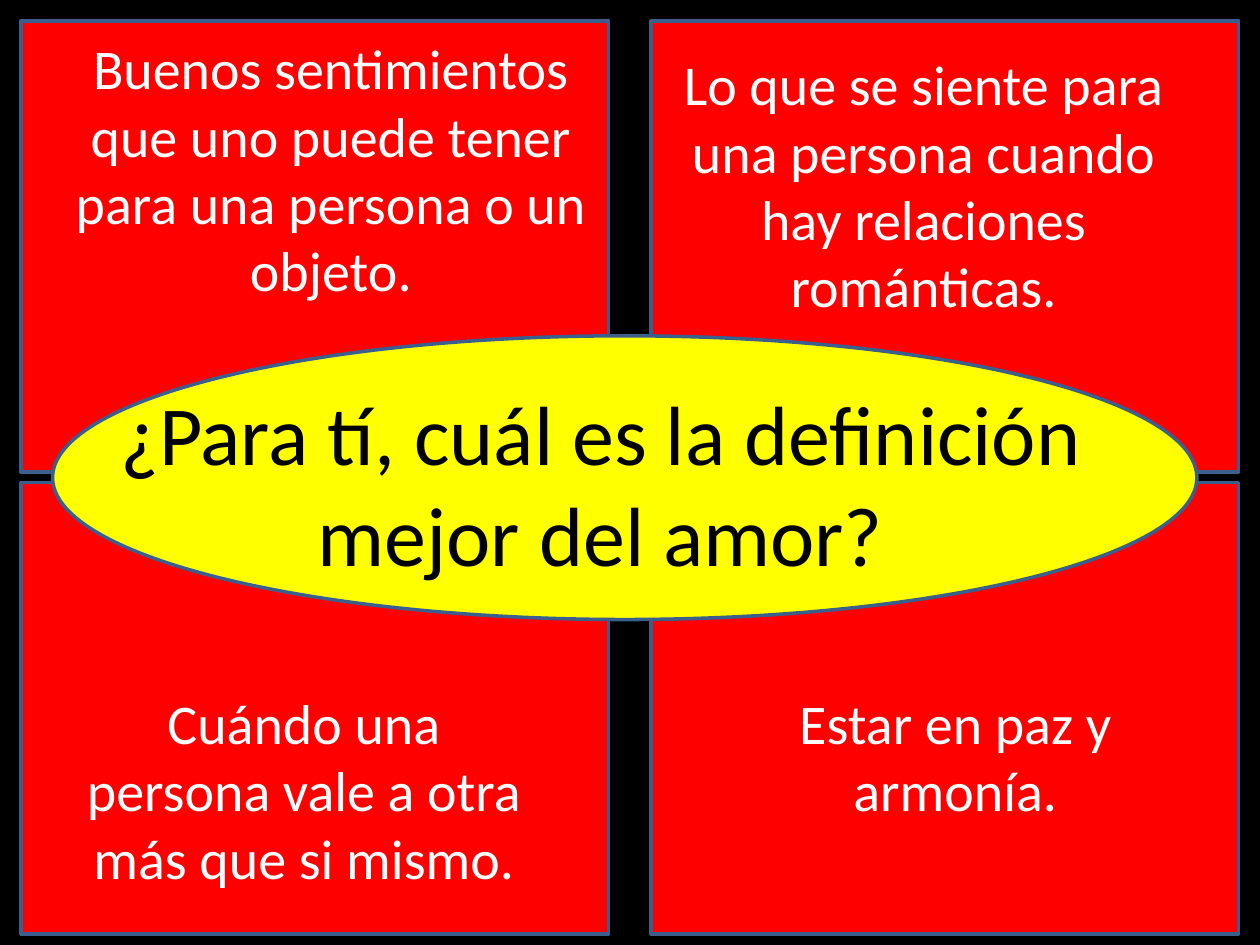
from pptx import Presentation
from pptx.dml.color import RGBColor
from pptx.enum.shapes import MSO_SHAPE as SHAPE
from pptx.enum.text import MSO_AUTO_SIZE as AUTO, PP_ALIGN as ALIGN
from pptx.util import Cm, Pt

COLORS = {
    "background": "000000",
    "panel": "FF0000",
    "oval": "FFFF00",
    "outline": "3A5F8C",
    "answer": "FFFFFF",
    "question": "000000",
}
FONT = "Calibri"

MARGIN = 0.42
PANEL_W, PANEL_H = 11.85, 9.1
PITCH_X, PITCH_Y = 12.7, 9.31

# Answer and its text box (left, top, width, height) within the panel, row by row
ANSWERS = [
    ("Buenos sentimientos que uno puede tener para una persona o un objeto.",
     (0.64, 0.14, 11.22, 5.74)),
    ("Lo que se siente para una persona cuando hay relaciones románticas.",
     (0, 0.46, 11, 5.74)),
    ("Cuándo una persona vale a otra más que si mismo.",
     (0.84, 4.03, 9.74, 4.37)),
    ("Estar en paz y armonía.",
     (1.27, 4.03, 9.74, 3)),
]
QUESTION = "¿Para tí, cuál es la definición mejor del amor?"


def rgb(name):
    return RGBColor.from_string(COLORS[name])


def add_outlined(slide, kind, box, fill):
    sp = slide.shapes.add_shape(kind, *map(Cm, box))
    sp.shadow.inherit = False
    sp.fill.solid()
    sp.fill.fore_color.rgb = rgb(fill)
    sp.line.color.rgb = rgb("outline")
    sp.line.width = Pt(2)


def add_text(slide, box, text, size, color):
    tb = slide.shapes.add_textbox(*map(Cm, box))
    tf = tb.text_frame
    tf.word_wrap = True
    tf.auto_size = AUTO.SHAPE_TO_FIT_TEXT
    tf.text = text
    p = tf.paragraphs[0]
    p.alignment = ALIGN.CENTER
    font = p.runs[0].font
    font.name = FONT
    font.size = Pt(size)
    font.color.rgb = rgb(color)


def add_panels(slide, left, top):
    """Draw the two-by-two grid and return the corner of each panel."""
    corners = [(left + col * PITCH_X, top + row * PITCH_Y)
               for row in range(2) for col in range(2)]
    for x, y in corners:
        add_outlined(slide, SHAPE.RECTANGLE, (x, y, PANEL_W, PANEL_H), "panel")
    return corners


def add_question(slide, left, top, width, height):
    add_outlined(slide, SHAPE.OVAL, (left, top, width, height), "oval")
    add_text(slide, (left, top + 0.8, width - 0.97, 4.37), QUESTION, 48, "question")


def add_answers(slide, corners):
    for (x, y), (text, (dx, dy, w, h)) in zip(corners, ANSWERS):
        add_text(slide, (x + dx, y + dy, w, h), text, 32, "answer")


def main():
    prs = Presentation()
    prs.slide_width, prs.slide_height = Cm(25.4), Cm(19.05)
    slide = prs.slides.add_slide(prs.slide_layouts[6])
    slide.background.fill.solid()
    slide.background.fill.fore_color.rgb = rgb("background")

    corners = add_panels(slide, MARGIN, MARGIN)
    add_question(slide, 1.06, 6.77, 23.07, 5.72)
    add_answers(slide, corners)
    prs.save("out.pptx")


if __name__ == "__main__":
    main()
